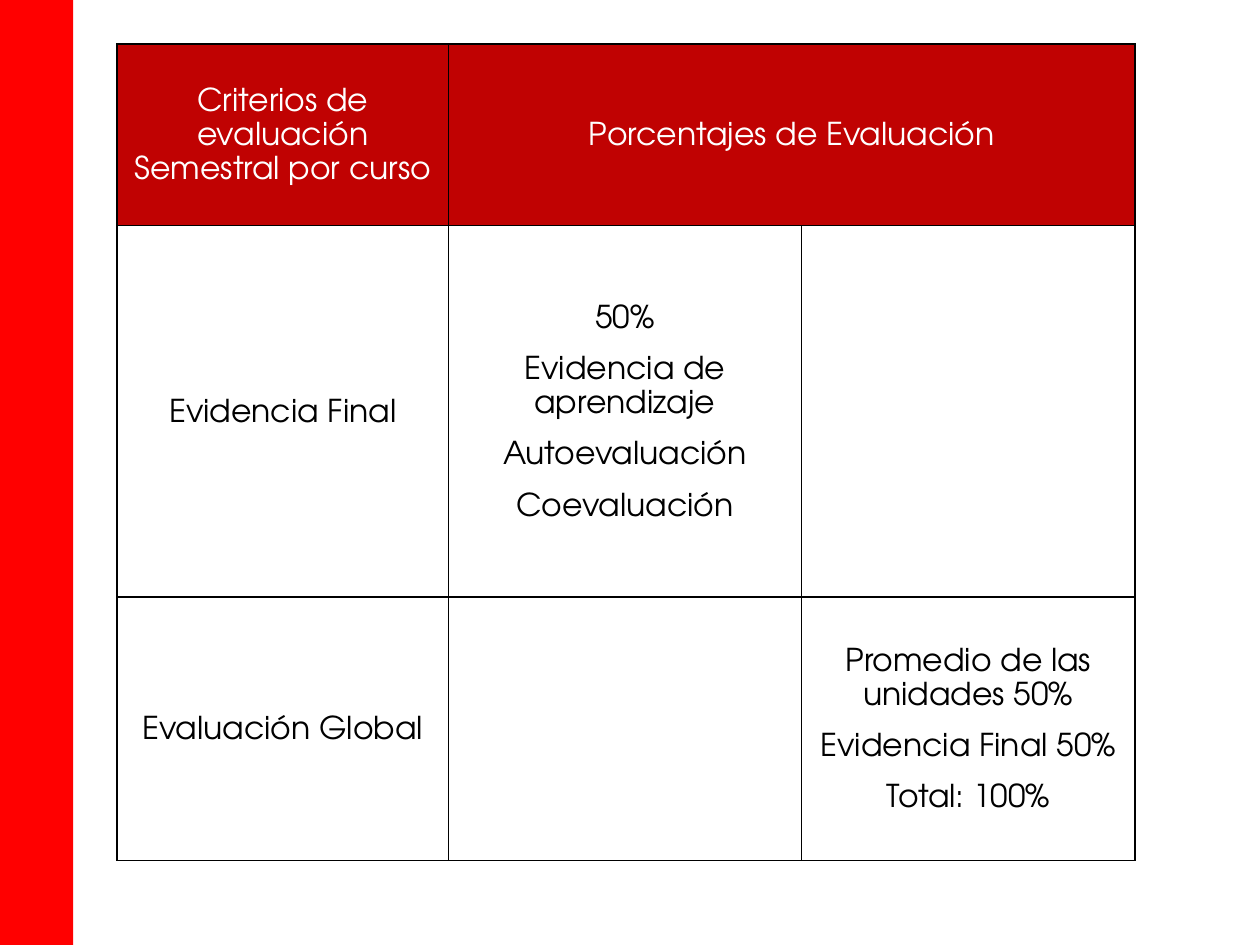
"""Build a slide with a table of semester evaluation criteria."""
from dataclasses import dataclass

from lxml import etree
from pptx import Presentation
from pptx.dml.color import RGBColor
from pptx.enum.shapes import MSO_SHAPE
from pptx.enum.text import MSO_ANCHOR, PP_ALIGN
from pptx.oxml.ns import qn
from pptx.util import Inches, Pt

RECT = MSO_SHAPE.RECTANGLE
MIDDLE = MSO_ANCHOR.MIDDLE
CENTER = PP_ALIGN.CENTER

RED = RGBColor(0xFF, 0x00, 0x00)
DARK_RED = RGBColor(0xC0, 0x02, 0x02)
BLACK = RGBColor(0x00, 0x00, 0x00)
WHITE = RGBColor(0xFF, 0xFF, 0xFF)
FONT = "TeX Gyre Adventor"

COL_WIDTHS = (2.63, 2.8, 2.65)
ROW_HEIGHTS = (1.44, 2.95, 2.09)
BORDERS = ("a:lnL", "a:lnR", "a:lnT", "a:lnB")


@dataclass(frozen=True)
class Entry:
    row: int
    col: int
    lines: tuple[str, ...]


ENTRIES = (
    Entry(0, 0, ("Criterios de evaluación Semestral por curso",)),
    Entry(0, 1, ("Porcentajes de Evaluación",)),
    Entry(1, 0, ("Evidencia Final",)),
    Entry(1, 1, ("50%", "Evidencia de aprendizaje", "Autoevaluación", "Coevaluación")),
    Entry(2, 0, ("Evaluación Global",)),
    Entry(2, 2, ("Promedio de las unidades 50%", "Evidencia Final 50%", "Total: 100%")),
)


def add_text(p, text: str, *, size: float = 18, color: RGBColor = BLACK) -> None:
    p.alignment = CENTER
    p.line_spacing = 1.15
    p.space_after = Pt(10)
    r = p.add_run()
    r.text = text
    r.font.name = FONT
    r.font.size = Pt(size)
    r.font.color.rgb = color


def set_borders(cell, color: RGBColor, width: float) -> None:
    tc_pr = cell._tc.get_or_add_tcPr()
    for tag in BORDERS:
        ln = etree.SubElement(tc_pr, qn(tag), w=str(Pt(width)))
        fill = etree.SubElement(ln, qn("a:solidFill"))
        etree.SubElement(fill, qn("a:srgbClr"), val=str(color))


def style_cell(cell, is_header: bool) -> None:
    cell.vertical_anchor = MIDDLE
    cell.margin_left = cell.margin_right = Inches(0.05)
    cell.margin_top = cell.margin_bottom = 0
    set_borders(cell, BLACK, 1)
    if is_header:
        cell.fill.solid()
        cell.fill.fore_color.rgb = DARK_RED
    else:
        cell.fill.background()


def fill_entry(table, entry: Entry) -> None:
    tf = table.cell(entry.row, entry.col).text_frame
    color = WHITE if entry.row == 0 else BLACK
    for i, line in enumerate(entry.lines):
        p = tf.add_paragraph() if i else tf.paragraphs[0]
        add_text(p, line, color=color)


def add_side_bar(s) -> None:
    sp = s.shapes.add_shape(RECT, 0, 0, Inches(0.58), Inches(7.5))
    sp.shadow.inherit = False
    sp.fill.solid()
    sp.fill.fore_color.rgb = RED
    sp.line.fill.background()


def add_criteria_table(s) -> None:
    frame = s.shapes.add_table(
        len(ROW_HEIGHTS), len(COL_WIDTHS), Inches(0.93), Inches(0.35),
        Inches(sum(COL_WIDTHS)), Inches(sum(ROW_HEIGHTS)))
    table = frame.table
    table.first_row = table.horz_banding = False
    for col, width in zip(table.columns, COL_WIDTHS):
        col.width = Inches(width)
    for i, (row, height) in enumerate(zip(table.rows, ROW_HEIGHTS)):
        row.height = Inches(height)
        for cell in row.cells:
            style_cell(cell, i == 0)
    table.cell(0, 1).merge(table.cell(0, 2))
    for entry in ENTRIES:
        fill_entry(table, entry)


def main() -> None:
    prs = Presentation()
    prs.slide_width, prs.slide_height = Inches(10), Inches(7.5)
    s = prs.slides.add_slide(prs.slide_layouts[6])
    add_side_bar(s)
    add_criteria_table(s)
    prs.save("out.pptx")


if __name__ == "__main__":
    main()
